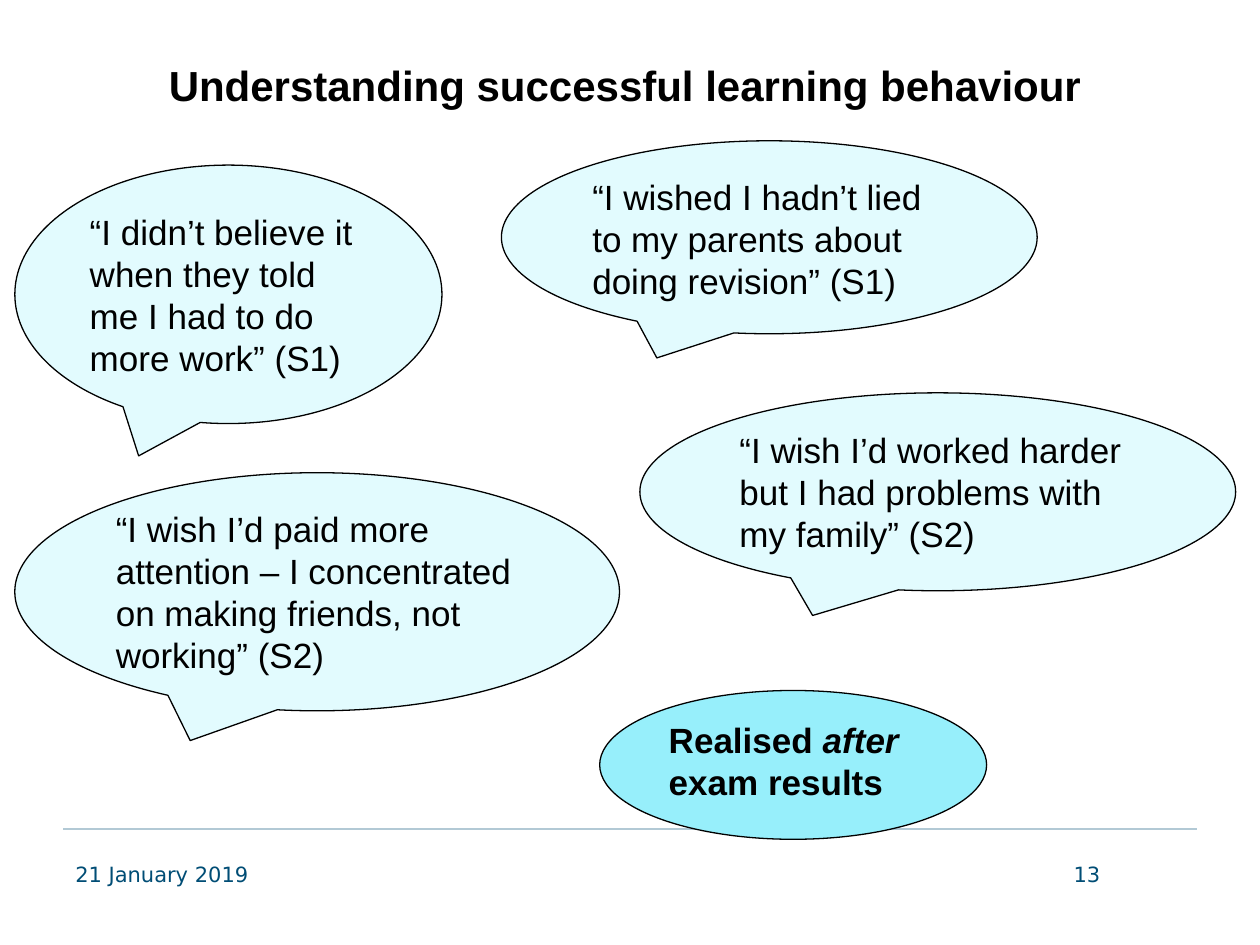
from pptx import Presentation
from pptx.dml.color import RGBColor
from pptx.enum.shapes import MSO_CONNECTOR, MSO_SHAPE
from pptx.enum.text import MSO_ANCHOR, PP_ALIGN
from pptx.oxml.ns import qn
from pptx.util import Cm, Pt
from lxml import etree

BLACK = RGBColor(0x00, 0x00, 0x00)
NAVY = RGBColor(0x00, 0x4D, 0x75)
RULE = RGBColor(0xB2, 0xC9, 0xD5)
PALE = RGBColor(0xE2, 0xFB, 0xFE)
AQUA = RGBColor(0x97, 0xEF, 0xFB)

CALLOUT, OVAL = MSO_SHAPE.OVAL_CALLOUT, MSO_SHAPE.OVAL
TOP, MIDDLE = MSO_ANCHOR.TOP, MSO_ANCHOR.MIDDLE
LEFT, CENTER, RIGHT = PP_ALIGN.LEFT, PP_ALIGN.CENTER, PP_ALIGN.RIGHT
STRAIGHT = MSO_CONNECTOR.STRAIGHT

# Quote, box in cm, anchor
QUOTES = [
    ("“I didn’t believe it when they told me I had to do more work” (S1)",
     (0.3, 3.33, 8.61, 5.21), MIDDLE),
    ("“I wished I hadn’t lied to my parents about doing revision” (S1)",
     (10.11, 2.84, 10.8, 3.89), TOP),
    ("“I wish I’d worked harder but I had problems with my family” (S2)",
     (12.9, 7.92, 12.01, 3.99), MIDDLE),
    ("“I wish I’d paid more attention – I concentrated on making friends, "
     "not working” (S2)",
     (0.3, 9.53, 12.19, 4.8), MIDDLE),
]


def write(shape, *parts, size=20, font="Arial", color=BLACK, bold=False,
          slant=None, align=LEFT, anchor=TOP):
    """Fill a shape with one paragraph; the part equal to slant is italic."""
    frame = shape.text_frame
    frame.word_wrap = True
    frame.vertical_anchor = anchor
    para = frame.paragraphs[0]
    para.alignment = align
    for part in parts:
        run = para.add_run()
        run.text = part
        run.font.size = Pt(size)
        run.font.name = font
        run.font.color.rgb = color
        run.font.bold = bold
        run.font.italic = part == slant


def add_bubble(slide, kind, box, fill):
    shape = slide.shapes.add_shape(kind, *map(Cm, box))
    shape.shadow.inherit = False
    shape.fill.solid()
    shape.fill.fore_color.rgb = fill
    shape.line.color.rgb = BLACK
    shape.line.width = Pt(0.75)
    return shape


def add_rule(slide, start, end, level):
    line = slide.shapes.add_connector(
        STRAIGHT, Cm(start), Cm(level), Cm(end), Cm(level))
    line.line.color.rgb = RULE
    line.line.width = Pt(1.25)
    props = line._element.find(qn("p:spPr"))
    etree.SubElement(props, qn("a:effectLst"))


def add_title(slide, text):
    title = slide.shapes.title
    title.left, title.top = Cm(1.07), Cm(1.07)
    title.width, title.height = Cm(23.06), Cm(1.85)
    write(title, text, size=24, bold=True, align=CENTER)


def add_note(slide, text, left, align):
    box = slide.shapes.add_textbox(Cm(left), Cm(17.25), Cm(5.92), Cm(1.32))
    write(box, text, size=12, font="DejaVu Sans", color=NAVY, align=align)


def main():
    deck = Presentation()
    deck.slide_width, deck.slide_height = Cm(25.4), Cm(19.05)
    slide = deck.slides.add_slide(deck.slide_layouts[5])

    # Title and footer
    add_rule(slide, 1.27, 24.13, 16.71)
    add_title(slide, "Understanding successful learning behaviour")
    add_note(slide, "21 January 2019", 1.27, LEFT)
    add_note(slide, "13", 16.51, RIGHT)

    # Student quotes
    for text, box, anchor in QUOTES:
        quote = add_bubble(slide, CALLOUT, box, PALE)
        quote.adjustments[0] = -0.21
        quote.adjustments[1] = 0.625
        write(quote, text, anchor=anchor)

    # Conclusion
    result = add_bubble(slide, OVAL, (12.09, 13.92, 7.8, 3), AQUA)
    write(result, "Realised ", "after ", "exam results",
          bold=True, slant="after ")

    deck.save("out.pptx")


if __name__ == "__main__":
    main()
